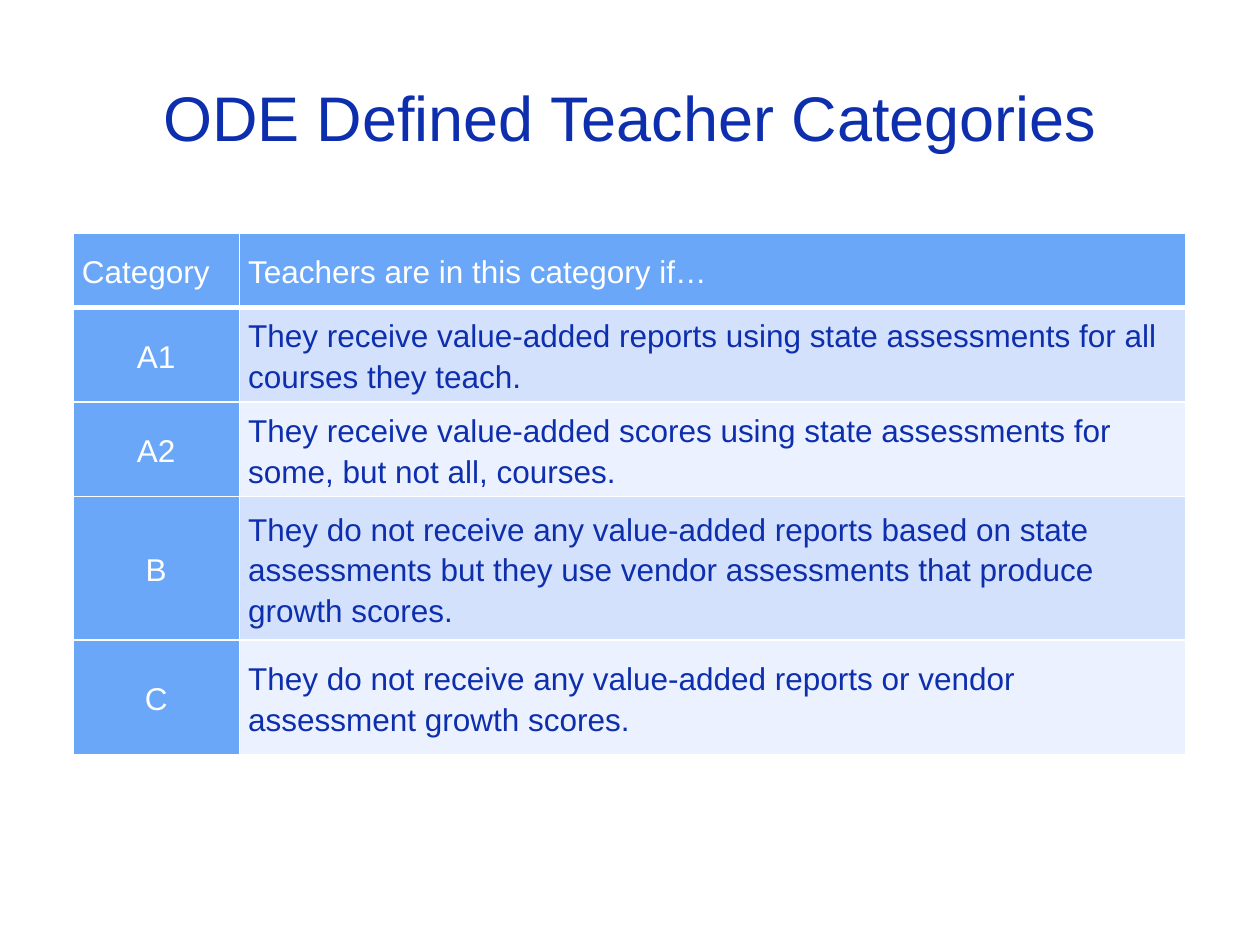
from lxml import etree
from pptx import Presentation
from pptx.dml.color import RGBColor
from pptx.enum.text import MSO_ANCHOR, PP_ALIGN
from pptx.oxml.ns import qn
from pptx.util import Inches, Pt

MIDDLE = MSO_ANCHOR.MIDDLE
LEFT, CENTER = PP_ALIGN.LEFT, PP_ALIGN.CENTER
NAVY, WHITE, BLUE = "0E2FAD", "FFFFFF", "6BA7F8"
BANDS = ("D4E1FC", "EBF1FE")
WIDTHS = (1.32, 7.51)
HEIGHTS = (0.59, 0.75, 0.75, 1.14, 0.91)
ROWS = (
    ("Category", "Teachers are in this category if…"),
    ("A1", "They receive value-added reports using state assessments for all courses they teach."),
    ("A2", "They receive value-added scores using state assessments for some, but not all, courses."),
    ("B", "They do not receive any value-added reports based on state assessments "
          "but they use vendor assessments that produce growth scores."),
    ("C", "They do not receive any value-added reports or vendor assessment growth scores."),
)


def rgb(code):
    """Turn a hex string into a colour."""
    return RGBColor.from_string(code)


def style(para, size, color, align):
    """Set the font and alignment of a paragraph."""
    para.alignment = align
    font = para.font
    font.name, font.size, font.bold = "Arial", Pt(size), False
    font.color.rgb = rgb(color)


def add_title(slide, text):
    """Place and fill the title."""
    title = slide.shapes.title
    title.left, title.top = Inches(0.5), Inches(0.3)
    title.width, title.height = Inches(9), Inches(1.25)
    frame = title.text_frame
    frame.text = text
    frame.vertical_anchor = MIDDLE
    style(frame.paragraphs[0], 36, NAVY, CENTER)


def add_edges(cell, base):
    """Draw white cell borders with the given bottom width in points."""
    props = cell._tc.get_or_add_tcPr()
    for side, width in (("L", 1), ("R", 1), ("T", 1), ("B", base)):
        line = etree.SubElement(props, qn(f"a:ln{side}"), w=str(Pt(width)))
        fill = etree.SubElement(line, qn("a:solidFill"))
        etree.SubElement(fill, qn("a:srgbClr"), val=WHITE)


def fill_cell(cell, text, fill, color, align, base):
    """Write and format one table cell."""
    add_edges(cell, base)
    cell.fill.solid()
    cell.fill.fore_color.rgb = rgb(fill)
    cell.vertical_anchor = MIDDLE
    cell.margin_left = cell.margin_right = Inches(0.07)
    cell.margin_top = cell.margin_bottom = 0
    cell.text = text
    para = cell.text_frame.paragraphs[0]
    para.line_spacing = 1.15
    style(para, 18, color, align)


def add_grid(slide):
    """Build the table of teacher categories."""
    table = slide.shapes.add_table(
        len(ROWS), len(WIDTHS), Inches(0.58), Inches(1.85),
        Inches(sum(WIDTHS)), Inches(sum(HEIGHTS))).table
    for column, width in zip(table.columns, WIDTHS):
        column.width = Inches(width)
    for row, height in zip(table.rows, HEIGHTS):
        row.height = Inches(height)
    for r, texts in enumerate(ROWS):
        for c, text in enumerate(texts):
            head = r == 0
            label = head or c == 0
            fill_cell(
                table.cell(r, c), text,
                BLUE if label else BANDS[(r - 1) % 2],
                WHITE if label else NAVY,
                CENTER if label and not head else LEFT,
                3 if head else 1)


def main():
    """Build and save the slide."""
    deck = Presentation()
    deck.slide_width, deck.slide_height = Inches(10), Inches(7.5)
    slide = deck.slides.add_slide(deck.slide_layouts[5])
    add_title(slide, "ODE Defined Teacher Categories")
    add_grid(slide)
    deck.save("out.pptx")


if __name__ == "__main__":
    main()
